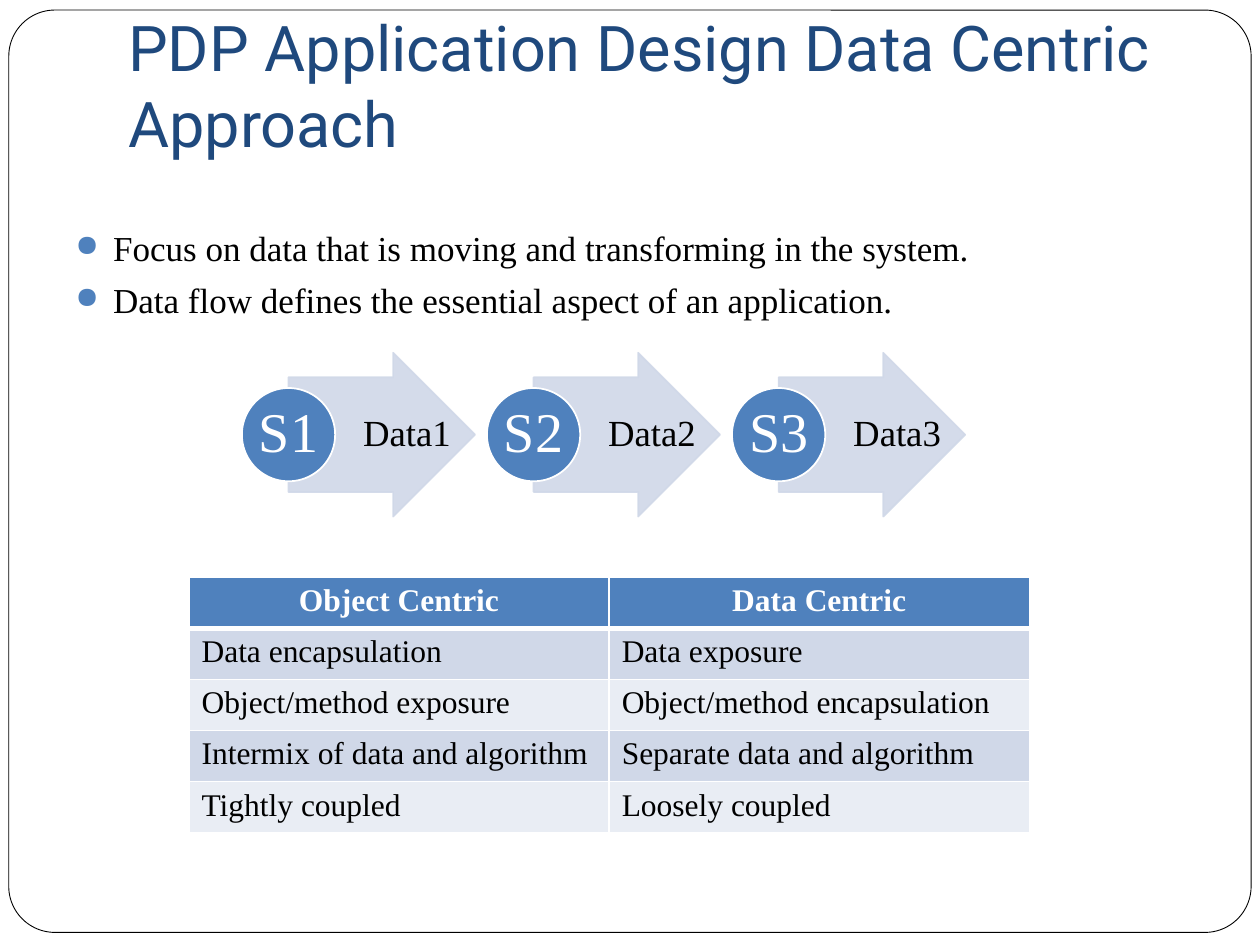
from dataclasses import dataclass

from lxml import etree
from pptx import Presentation
from pptx import util as u
from pptx.dml.color import RGBColor
from pptx.enum import shapes, text
from pptx.oxml.ns import qn

COLUMNS, ROWS = 10, 7.5
WIDTH, HEIGHT = u.Inches(10), u.Inches(7.5)

WHITE = RGBColor(0xFF, 0xFF, 0xFF)
BLACK = RGBColor(0, 0, 0)
NAVY = RGBColor(0x1F, 0x49, 0x7D)
BLUE = RGBColor(0x4F, 0x81, 0xBD)
PALE_BLUE = RGBColor(0xD0, 0xD8, 0xE8)
PALEST_BLUE = RGBColor(0xE9, 0xED, 0xF4)

SERIF = "Times New Roman"
SANS = "Roboto"

TITLE = "PDP Application Design Data Centric Approach"
POINTS = [
    "Focus on data that is moving and transforming in the system.",
    "Data flow defines the essential aspect of an application.",
]
STEPS = [("S1", "Data1"), ("S2", "Data2"), ("S3", "Data3")]
COMPARISON = [
    ("Object Centric", "Data Centric"),
    ("Data encapsulation", "Data exposure"),
    ("Object/method exposure", "Object/method encapsulation"),
    ("Intermix of data and algorithm", "Separate data and algorithm"),
    ("Tightly coupled", "Loosely coupled"),
]


@dataclass
class Box:
    """A region measured in grid columns and rows."""
    left: float
    top: float
    width: float
    height: float

    def emu(self):
        column, row = WIDTH / COLUMNS, HEIGHT / ROWS
        return (round(self.left * column), round(self.top * row),
                round(self.width * column), round(self.height * row))


def add_run(para, words, size, color, font=SERIF, bold=False):
    span = para.add_run()
    span.text = words
    span.font.size = u.Pt(size)
    span.font.name = font
    span.font.bold = bold
    span.font.color.rgb = color


def set_frame(frame, insets, anchor=text.MSO_ANCHOR.TOP, wrap=True):
    frame.word_wrap = wrap
    frame.vertical_anchor = anchor
    (frame.margin_left, frame.margin_top,
     frame.margin_right, frame.margin_bottom) = map(u.Inches, insets)


def add_figure(page, kind, box, fill, line, weight):
    figure = page.shapes.add_shape(kind, *box.emu())
    figure.shadow.inherit = False
    figure.fill.solid()
    figure.fill.fore_color.rgb = fill
    figure.line.color.rgb = line
    figure.line.width = u.Pt(weight)
    return figure


def add_centred_text(frame, words, size, color):
    para = frame.paragraphs[0]
    para.alignment = text.PP_ALIGN.CENTER
    para.line_spacing = 0.9
    add_run(para, words, size, color)


def make_translucent(figure, percent):
    for color in figure._element.spPr.iter(qn("a:srgbClr")):
        etree.SubElement(color, qn("a:alpha"), val=str(percent * 1000))


def add_bullet(para):
    properties = para._p.get_or_add_pPr()
    properties.set("marL", str(u.Inches(0.3)))
    properties.set("indent", str(u.Inches(-0.3)))
    color = etree.SubElement(properties, qn("a:buClr"))
    etree.SubElement(color, qn("a:srgbClr"), val=str(BLUE))
    etree.SubElement(properties, qn("a:buSzPct"), val="85000")
    etree.SubElement(properties, qn("a:buChar"), char="●")


def set_borders(cell, bottom):
    """Draw white borders, one point wide except at the bottom."""
    properties = cell._tc.get_or_add_tcPr()
    weights = {"a:lnL": 1, "a:lnR": 1, "a:lnT": 1, "a:lnB": bottom}
    for place, (tag, weight) in enumerate(weights.items()):
        border = etree.Element(qn(tag), w=str(u.Pt(weight)))
        fill = etree.SubElement(border, qn("a:solidFill"))
        etree.SubElement(fill, qn("a:srgbClr"), val=str(WHITE))
        properties.insert(place, border)


def draw_border(page, box):
    border = add_figure(page, shapes.MSO_SHAPE.ROUNDED_RECTANGLE, box, WHITE, BLACK, 0.5)
    border.adjustments[0] = 0.05


def draw_title(page, box):
    frame = page.shapes.add_textbox(*box.emu()).text_frame
    set_frame(frame, (0.1, 0.05, 0.1, 0.1), text.MSO_ANCHOR.BOTTOM)
    add_run(frame.paragraphs[0], TITLE, 36, NAVY, SANS)


def draw_points(page, box):
    frame = page.shapes.add_textbox(*box.emu()).text_frame
    set_frame(frame, (0.1, 0.05, 0.1, 0.05))
    for index, words in enumerate(POINTS):
        para = frame.add_paragraph() if index else frame.paragraphs[0]
        para.space_before = u.Pt(5.8)
        add_bullet(para)
        add_run(para, words, 20, BLACK)


def draw_step(page, box, stage, data):
    """Draw one arrow of data with the circle of its stage on the tail."""
    diameter = 0.4 * box.width
    radius = diameter / 2
    arrow_box = Box(box.left + radius, box.top, box.width - radius, box.height)
    arrow = add_figure(page, shapes.MSO_SHAPE.RIGHT_ARROW, arrow_box, PALE_BLUE, PALE_BLUE, 1)
    arrow.adjustments[0] = 0.7
    arrow.adjustments[1] = 0.5
    make_translucent(arrow, 90)

    label_box = Box(box.left + diameter, box.top, box.width - diameter, box.height)
    label = page.shapes.add_textbox(*label_box.emu()).text_frame
    set_frame(label, (0.06, 0.01, 0.03, 0.01), text.MSO_ANCHOR.MIDDLE)
    add_centred_text(label, data, 21, BLACK)

    circle_box = Box(box.left, box.top + (box.height - diameter) / 2, diameter, diameter)
    circle = add_figure(page, shapes.MSO_SHAPE.OVAL, circle_box, BLUE, WHITE, 1)
    set_frame(circle.text_frame, (0.02,) * 4, text.MSO_ANCHOR.MIDDLE, wrap=False)
    add_centred_text(circle.text_frame, stage, 32, WHITE)


def draw_flow(page, box):
    step_width = 1.85
    pitch = (box.width - step_width) / (len(STEPS) - 1)
    for index, (stage, data) in enumerate(STEPS):
        step_box = Box(box.left + index * pitch, box.top, step_width, box.height)
        draw_step(page, step_box, stage, data)


def draw_comparison(page, box):
    table = page.shapes.add_table(len(COMPARISON), len(COMPARISON[0]), *box.emu()).table
    for row, entries in enumerate(COMPARISON):
        header = row == 0
        band = PALE_BLUE if row % 2 else PALEST_BLUE
        for column, words in enumerate(entries):
            cell = table.cell(row, column)
            cell.fill.solid()
            cell.fill.fore_color.rgb = BLUE if header else band
            set_borders(cell, bottom=3 if header else 1)
            para = cell.text_frame.paragraphs[0]
            para.alignment = text.PP_ALIGN.CENTER if header else text.PP_ALIGN.LEFT
            add_run(para, words, 18, WHITE if header else BLACK, bold=header)


def main():
    deck = Presentation()
    deck.slide_width, deck.slide_height = WIDTH, HEIGHT
    page = deck.slides.add_slide(deck.slide_layouts[6])
    draw_border(page, Box(0.07, 0.08, 9.86, 7.32))
    draw_title(page, Box(0.92, 0.5, 8.5, 0.87))
    draw_points(page, Box(0.5, 1.75, 9, 1.25))
    draw_flow(page, Box(1.92, 2.8, 5.74, 1.3))
    draw_comparison(page, Box(1.5, 4.58, 6.67, 2.03))
    deck.save("out.pptx")


if __name__ == "__main__":
    main()
